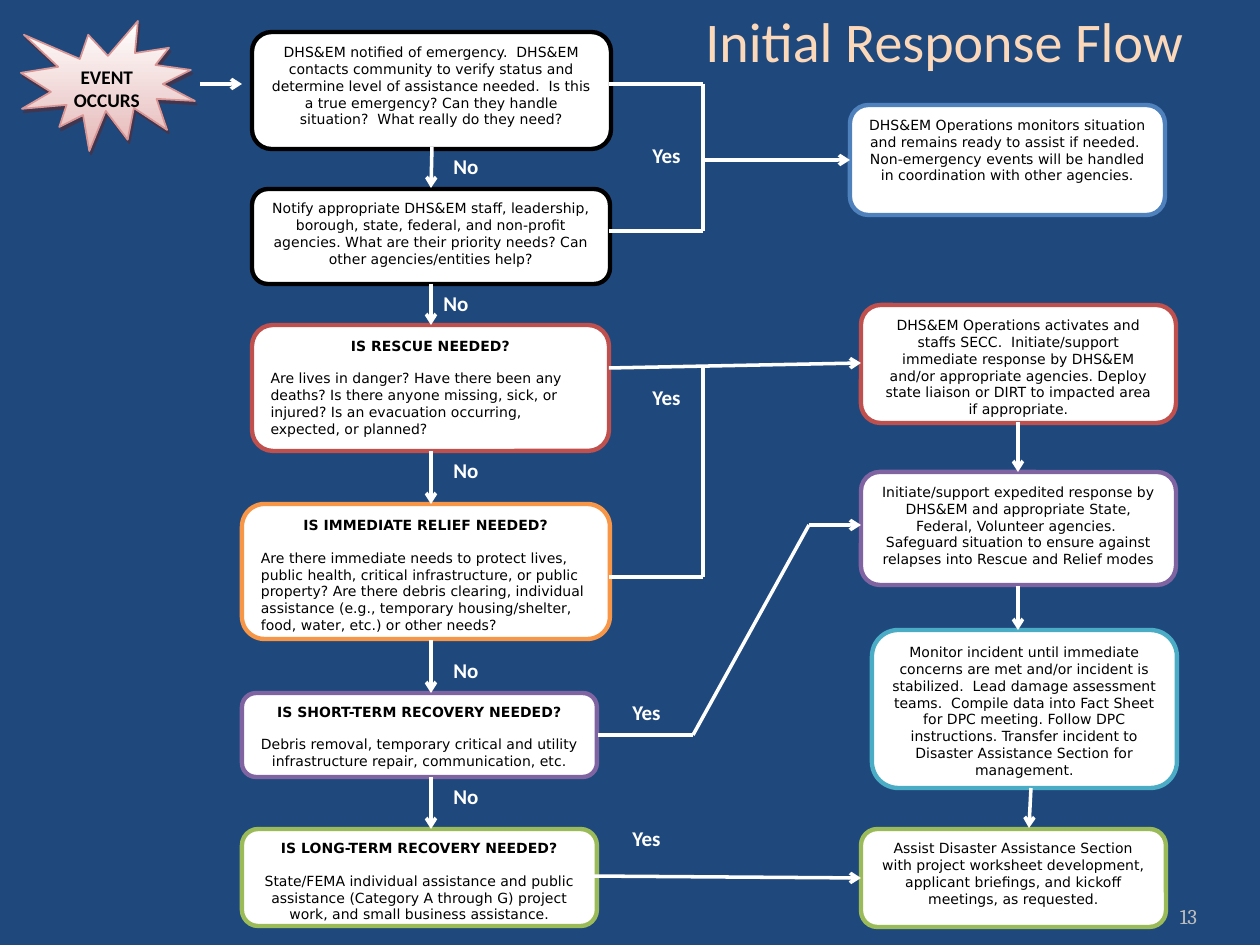
from lxml.etree import SubElement
from pptx import Presentation
from pptx.dml.color import RGBColor
from pptx.enum.shapes import MSO_CONNECTOR as Connector, MSO_SHAPE as Shape
from pptx.enum.text import MSO_ANCHOR as Anchor, PP_ALIGN as Align
from pptx.oxml import parse_xml
from pptx.oxml.ns import nsdecls, qn
from pptx.util import Pt

PX = 914400 / 126  # EMU per pixel

THEME = {
    "background": "1F497D", "title": "FCD8BA", "number": "BDBDBD",
    "white": "FFFFFF", "black": "000000", "blue": "4F81BD", "red": "C0504D",
    "orange": "F79646", "purple": "8064A2", "teal": "4BACC6", "green": "9BBB59",
    "burst_fill": "E5B8B7", "burst_line": "D99594", "burst_shadow": "622423",
    "label_font": "Calibri", "box_font": "DejaVu Sans", "number_font": "Cambria",
    "title_size": 32, "label_size": 12, "burst_size": 11, "box_size": 8,
}


def color(name):
    return RGBColor.from_string(THEME[name])


def write(paragraph, text, font, size, ink, bold=False, align=Align.LEFT):
    paragraph.text = text
    paragraph.alignment = align
    paragraph.font.name = THEME[font]
    paragraph.font.size = Pt(THEME[size])
    paragraph.font.bold = bold
    paragraph.font.color.rgb = color(ink)


prs = Presentation()
prs.slide_width, prs.slide_height = round(1260 * PX), round(945 * PX)
slide = prs.slides.add_slide(prs.slide_layouts[6])
slide.background.fill.solid()
slide.background.fill.fore_color.rgb = color("background")
shapes = slide.shapes

# Title, slide number and the Yes/No labels
texts = [
    ("Initial Response Flow", 693, 0, 567, 116, "label_font", "title_size", "title", False),
    ("13", 1092, 885, 105, 50, "number_font", "label_size", "number", False),
]
for word, width, places in [
    ("No", 50, [(441, 147), (431, 284), (441, 451), (441, 651), (441, 777)]),
    ("Yes", 63, [(640, 136), (640, 378), (620, 693), (620, 819)]),
]:
    texts += [(word, x, y, width, 38, "label_font", "label_size", "white", True)
              for x, y in places]

for text, x, y, w, h, font, size, ink, bold in texts:
    frame = shapes.add_textbox(*(round(v * PX) for v in (x, y, w, h))).text_frame
    frame.word_wrap = text != "No"
    write(frame.paragraphs[0], text, font, size, ink, bold)
    if text == "13":
        frame.margin_left = frame.margin_right = 0
        frame.vertical_anchor = Anchor.BOTTOM
        frame.paragraphs[0].alignment = Align.RIGHT

# Starting event
event = shapes.add_shape(Shape.EXPLOSION1, *(round(v * PX) for v in (21, 21, 174, 130)))
event.fill.gradient()
event.fill.gradient_angle = 270
for stop, position, tint in zip(event.fill.gradient_stops, (0, 1), ("white", "burst_fill")):
    stop.position = position
    stop.color.rgb = color(tint)
event.line.color.rgb = color("burst_line")
event.line.width = Pt(1)
event._element.spPr.append(parse_xml(
    f'<a:effectLst {nsdecls("a")}><a:outerShdw dist="27940" dir="3780000">'
    f'<a:srgbClr val="{THEME["burst_shadow"]}"><a:alpha val="50000"/></a:srgbClr>'
    '</a:outerShdw></a:effectLst>'))
event.text_frame.word_wrap = True
event.text_frame.vertical_anchor = Anchor.TOP
event_text = event.text_frame.paragraphs[0]
write(event_text, "EVENT OCCURS", "label_font", "burst_size", "black", True, Align.CENTER)
event_text.space_after = Pt(10)

# Boxes: left, top, width, height, outline, heading, body, body alignment
boxes = [
    # Questions
    (252, 32, 359, 117, "black", None,
     "DHS&EM notified of emergency.  DHS&EM contacts community to verify status and "
     "determine level of assistance needed.  Is this a true emergency? Can they handle "
     "situation?  What really do they need?", Align.CENTER),
    (252, 189, 358, 95, "black", None,
     "Notify appropriate DHS&EM staff, leadership, borough, state, federal, and non-profit "
     "agencies. What are their priority needs? Can other agencies/entities help?",
     Align.CENTER),
    (252, 325, 357, 126, "red", "IS RESCUE NEEDED?",
     "Are lives in danger? Have there been any deaths? Is there anyone missing, sick, or "
     "injured? Is an evacuation occurring, expected, or planned?", Align.LEFT),
    (242, 504, 368, 135, "orange", "IS IMMEDIATE RELIEF NEEDED?",
     "Are there immediate needs to protect lives, public health, critical infrastructure, "
     "or public property? Are there debris clearing, individual assistance (e.g., temporary "
     "housing/shelter, food, water, etc.) or other needs?", Align.LEFT),
    (242, 693, 355, 84, "purple", "IS SHORT-TERM RECOVERY NEEDED?",
     "Debris removal, temporary critical and utility infrastructure repair, "
     "communication, etc.", Align.CENTER),
    (242, 829, 355, 97, "green", "IS LONG-TERM RECOVERY NEEDED?",
     "State/FEMA individual assistance and public assistance (Category A through G) "
     "project work, and small business assistance.", Align.CENTER),
    # Responses
    (850, 105, 315, 110, "blue", None,
     "DHS&EM Operations monitors situation and remains ready to assist if needed.  "
     "Non-emergency events will be handled in coordination with other agencies.",
     Align.CENTER),
    (861, 305, 315, 118, "red", None,
     "DHS&EM Operations activates and staffs SECC.  Initiate/support immediate response by "
     "DHS&EM and/or appropriate agencies. Deploy state liaison or DIRT to impacted area if "
     "appropriate.", Align.CENTER),
    (861, 472, 315, 113, "purple", None,
     "Initiate/support expedited response by DHS&EM and appropriate State, Federal, "
     "Volunteer agencies.  Safeguard situation to ensure against relapses into Rescue and "
     "Relief modes", Align.CENTER),
    (872, 630, 305, 158, "teal", None,
     "Monitor incident until immediate concerns are met and/or incident is stabilized.  "
     "Lead damage assessment teams.  Compile data into Fact Sheet for DPC meeting. Follow "
     "DPC instructions. Transfer incident to Disaster Assistance Section for management.",
     Align.CENTER),
    (861, 829, 305, 98, "green", None,
     "Assist Disaster Assistance Section with project worksheet development, applicant "
     "briefings, and kickoff meetings, as requested.", Align.CENTER),
]
for x, y, w, h, outline, heading, body, align in boxes:
    box = shapes.add_shape(Shape.ROUNDED_RECTANGLE, *(round(v * PX) for v in (x, y, w, h)))
    box.shadow.inherit = False
    box.fill.solid()
    box.fill.fore_color.rgb = color("white")
    box.line.color.rgb = color(outline)
    box.line.width = Pt(2.5)
    frame = box.text_frame
    frame.word_wrap = True
    frame.vertical_anchor = Anchor.TOP
    paragraph = frame.paragraphs[0]
    if heading:
        write(paragraph, heading, "box_font", "box_size", "black", True, Align.CENTER)
        paragraph.space_after = Pt(6)
        paragraph = frame.add_paragraph()
        paragraph.space_before = Pt(3)
    write(paragraph, body, "box_font", "box_size", "black", align=align)
    paragraph.space_after = Pt(10)

# Flow lines: x1, y1, x2, y2
arrows = [
    (200, 84, 242, 84),
    # Down the questions
    (432, 147, 431, 188), (431, 284, 431, 325), (431, 451, 431, 504),
    (431, 640, 431, 693), (431, 777, 431, 829),
    # Across to the responses
    (703, 160, 850, 160), (609, 368, 861, 363), (809, 525, 861, 525), (588, 876, 861, 878),
    # Down the responses
    (1018, 422, 1018, 472), (1018, 586, 1018, 630), (1031, 788, 1029, 828),
]
plain_lines = [
    (609, 84, 703, 84), (703, 84, 703, 231), (609, 231, 703, 231),
    (703, 577, 703, 368), (609, 577, 703, 577),
    (598, 735, 693, 735), (693, 735, 809, 525),
]
for ends in arrows + plain_lines:
    flow = shapes.add_connector(Connector.STRAIGHT, *(round(v * PX) for v in ends))
    flow.line.color.rgb = color("white")
    flow.line.width = Pt(2)
    if ends in arrows:
        SubElement(flow.line._get_or_add_ln(), qn("a:tailEnd"), type="arrow")
    SubElement(flow._element.spPr, qn("a:effectLst"))

prs.save("out.pptx")
